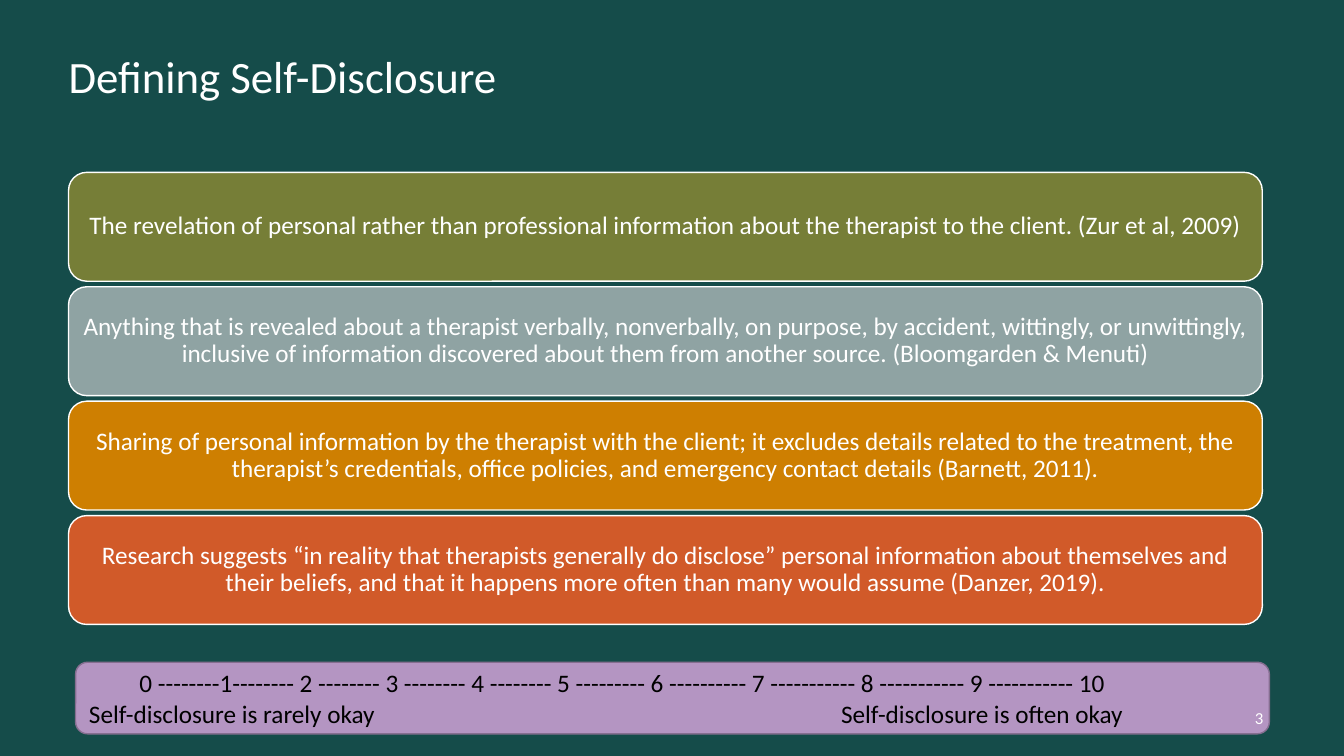
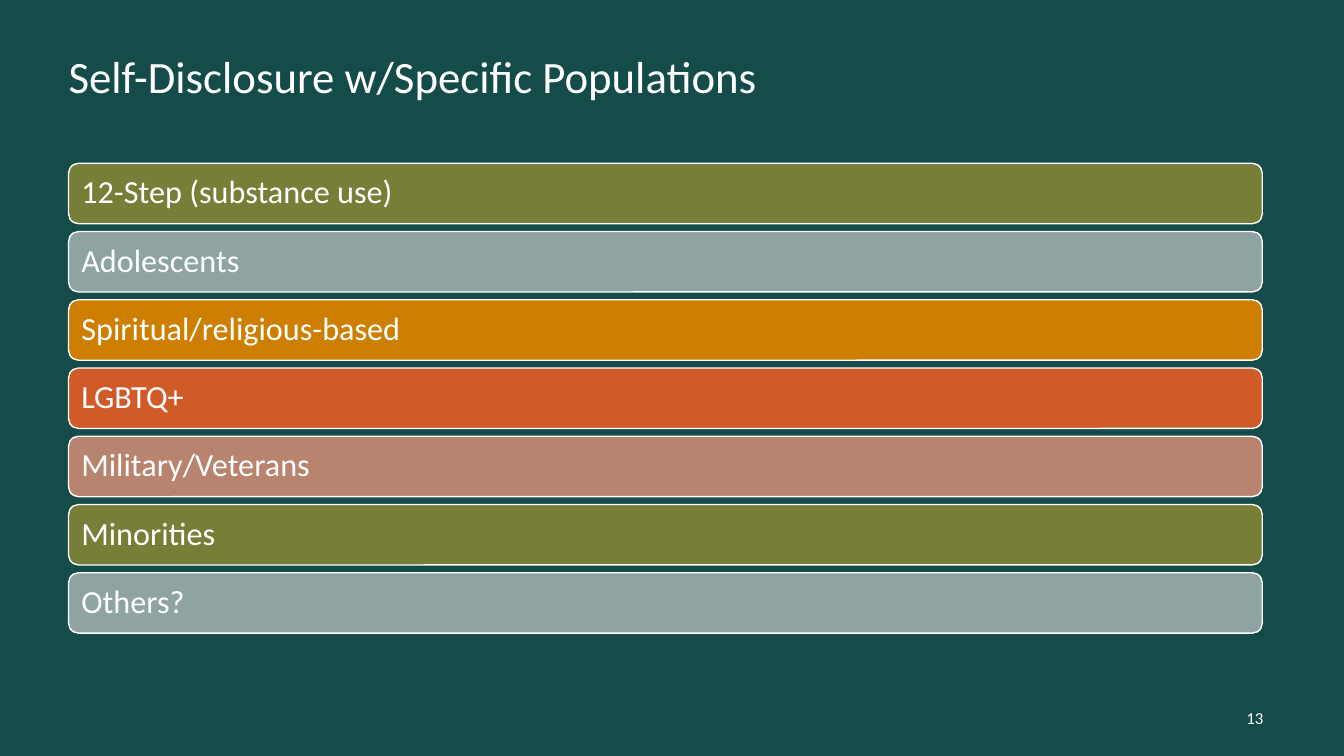
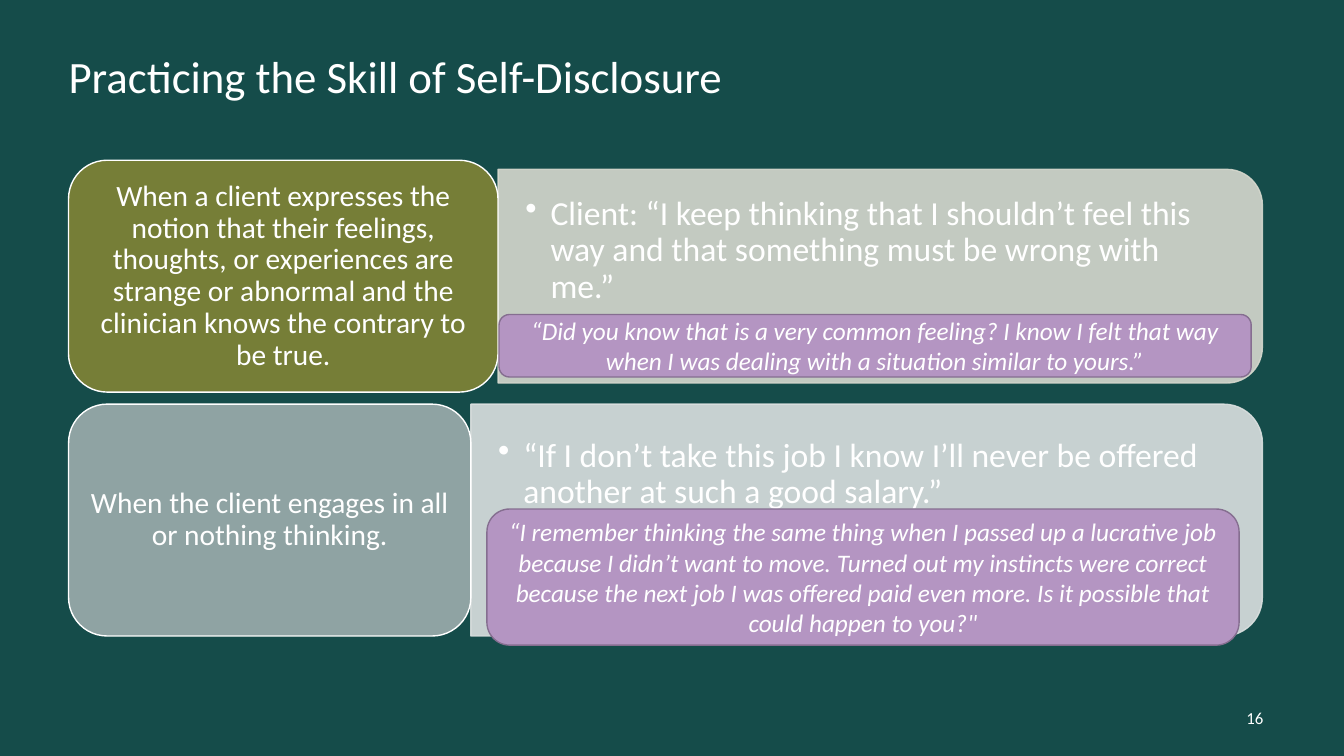
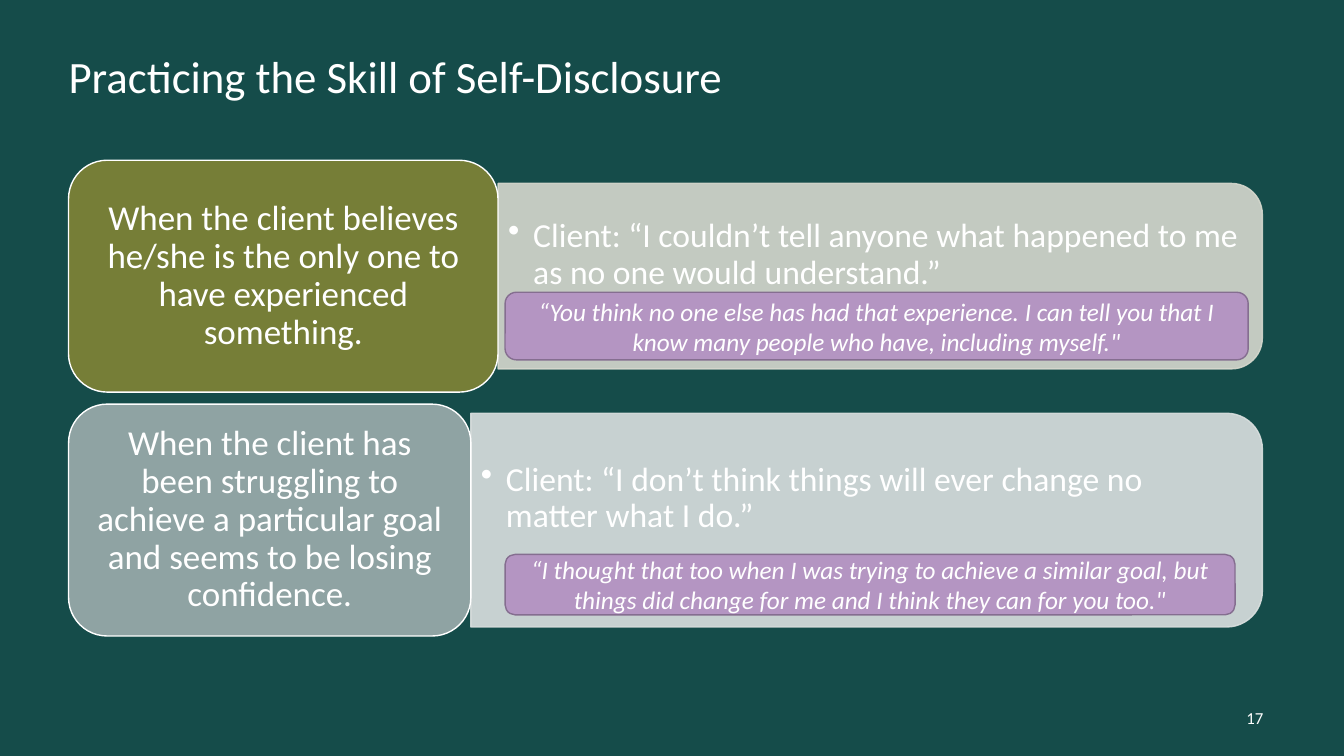
"""Build four slides about therapist self-disclosure."""
from lxml.etree import SubElement
from pptx import Presentation
from pptx.dml.color import RGBColor
from pptx.enum.shapes import MSO_SHAPE as Shape
from pptx.enum.text import MSO_ANCHOR as Anchor, MSO_AUTO_SIZE as Fit, PP_ALIGN as Align
from pptx.oxml.ns import qn
from pptx.util import Inches, Pt

FONT, WHITE, BLACK, BACK = "Calibri", "FFFFFF", "000000", "154C4A"
LILAC, PLUM = "B495C2", "856E90"
CARDS = ["767E37", "8FA3A3", "CE7F01", "D15A29", "B88470"]
TINTS = ["D6D8CE", "DBE0E0"]
LEFT, WIDTH = 0.68, 11.84
RIGHT = LEFT + WIDTH

STACKS = [
    {"title": "Defining Self-Disclosure", "page": "3",
     "top": 1.71, "step": 1.135, "high": 1.08, "size": 18, "pad": 0.07, "align": Align.CENTER,
     "items": [
         "The revelation of personal rather than professional information about the therapist to the client. (Zur et al, 2009)",
         "Anything that is revealed about a therapist verbally, nonverbally, on purpose, by accident, wittingly, or unwittingly, inclusive of information discovered about them from another source. (Bloomgarden & Menuti)",
         "Sharing of personal information by the therapist with the client; it excludes details related to the treatment, the therapist’s credentials, office policies, and emergency contact details (Barnett, 2011).",
         "Research suggests “in reality that therapists generally do disclose” personal information about themselves and their beliefs, and that it happens more often than many would assume (Danzer, 2019)."],
     "scale": [
         "0 --------1-------- 2 -------- 3 -------- 4 -------- 5 --------- 6 ---------- 7 ----------- 8 ----------- 9 ----------- 10",
         "Self-disclosure is rarely okay\tSelf-disclosure is often okay"]},
    {"title": "Self-Disclosure w/Specific Populations", "page": "13",
     "top": 1.62, "step": 0.677, "high": 0.6, "size": 23, "pad": 0.1, "align": Align.LEFT,
     "items": ["12-Step (substance use)", "Adolescents", "Spiritual/religious-based",
               "LGBTQ+", "Military/Veterans", "Minorities", "Others?"]},
]

SKILL = "Practicing the Skill of Self-Disclosure"
ROW_TOP, ROW_STEP, ROW_HIGH = 1.59, 2.42, 2.3
CARD_WIDE = [4.26, 3.99]
PAIRS = [
    {"title": SKILL, "page": "16", "size": 21, "pad": 0.27, "rows": [
        {"case": "When a client expresses the notion that their feelings, thoughts, or experiences are strange or abnormal and the clinician knows the contrary to be true.",
         "quote": "Client: “I keep thinking that I shouldn’t feel this way and that something must be wrong with me.”",
         "high": 2.12, "drop": 0.27,
         "reply": "“Did you know that is a very common feeling? I know I felt that way when I was dealing with a situation similar to yours.”",
         "box": (4.95, 3.12, 7.46, 0.62)},
        {"case": "When the client engages in all or nothing thinking.",
         "quote": "“If I don’t take this job I know I’ll never be offered another at such a good salary.”",
         "high": 2.3, "drop": 0.34,
         "reply": "“I remember thinking the same thing when I passed up a lucrative job because I didn’t want to move. Turned out my instincts were correct because the next job I was offered paid even more. Is it possible that could happen to you?\"",
         "box": (4.83, 5.05, 7.46, 1.35)}]},
    {"title": SKILL, "page": "17", "size": 25, "pad": 0.1, "rows": [
        {"case": "When the client believes he/she is the only one to have experienced something.",
         "quote": "Client: “I couldn’t tell anyone what happened to me as no one would understand.”",
         "high": 1.84, "drop": 0.35,
         "reply": "“You think no one else has had that experience. I can tell you that I know many people who have, including myself.\"",
         "box": (5.01, 2.9, 7.37, 0.67)},
        {"case": "When the client has been struggling to achieve a particular goal and seems to be losing confidence.",
         "quote": "Client: “I don’t think things will ever change no matter what I do.”",
         "high": 2.12, "drop": 0.49,
         "reply": "“I thought that too when I was trying to achieve a similar goal, but things did change for me and I think they can for you too.\"",
         "box": (5.01, 5.5, 7.24, 0.6)}]},
]


def rgb(code):
    return RGBColor.from_string(code)


def place(box):
    return [Inches(n) for n in box]


def write(shape, text, size, color=WHITE, align=Align.LEFT, anchor=Anchor.MIDDLE,
          pad=(0.1, 0.05), space=1, italic=False):
    frame = shape.text_frame
    frame.text = text
    frame.word_wrap = True
    frame.auto_size = Fit.NONE
    frame.vertical_anchor = anchor
    frame.margin_left = frame.margin_right = Inches(pad[0])
    frame.margin_top = frame.margin_bottom = Inches(pad[1])
    for para in frame.paragraphs:
        para.alignment = align
        para.line_spacing = space
        for run in para.runs:
            font = run.font
            font.name, font.size, font.italic = FONT, Pt(size), italic
            font.color.rgb = rgb(color)
    return frame.paragraphs


def draw(slide, kind, box, fill, line):
    shape = slide.shapes.add_shape(kind, *place(box))
    shape.shadow.inherit = False
    shape.fill.solid()
    shape.fill.fore_color.rgb = rgb(fill)
    shape.line.color.rgb = rgb(line)
    shape.line.width = Pt(1)
    return shape


def card(slide, box, text, fill, size, align, pad):
    shape = draw(slide, Shape.ROUNDED_RECTANGLE, box, fill, WHITE)
    write(shape, text, size, align=align, pad=pad, space=0.9)


def panel(slide, box, tint):
    x, y, wide, high = box
    turned = (x + (wide - high) / 2, y + (high - wide) / 2, high, wide)
    shape = draw(slide, Shape.ROUND_2_SAME_RECTANGLE, turned, tint, tint)
    shape.rotation = 90
    for color in shape.element.spPr.iter(qn("a:srgbClr")):
        SubElement(color, qn("a:alpha"), val="90000")


def quote(slide, box, text, pad):
    area = slide.shapes.add_textbox(*place(box))
    para = write(area, text, 24, anchor=Anchor.TOP, pad=(pad, 0), space=0.9)[0]
    props = para._p.get_or_add_pPr()
    props.set("marL", str(Inches(0.25)))
    props.set("indent", str(-Inches(0.25)))
    SubElement(props, qn("a:buChar"), char="•")


def scale(slide, lines):
    bar = draw(slide, Shape.ROUNDED_RECTANGLE, (0.75, 6.57, WIDTH, 0.71), LILAC, PLUM)
    marks, ends = write(bar, "\n".join(lines), 18, BLACK)
    marks._p.get_or_add_pPr().set("marL", str(Inches(0.5)))
    tabs = SubElement(ends._p.get_or_add_pPr(), qn("a:tabLst"))
    SubElement(tabs, qn("a:tab"), pos=str(Inches(7.46)), algn="l")


def start(deck, layout, data):
    slide = deck.slides.add_slide(layout)
    write(slide.shapes.title, data["title"], 32, anchor=Anchor.TOP, pad=(0, 0))
    return slide


def number(slide, page):
    area = slide.shapes.add_textbox(*place((11.23, 6.71, 1.3, 0.79)))
    write(area, page, 12, align=Align.RIGHT, pad=(0, 0.2), space=1.2)


def stack(slide, data):
    for i, text in enumerate(data["items"]):
        box = (LEFT, data["top"] + i * data["step"], WIDTH, data["high"])
        pad = (data["pad"], data["pad"])
        card(slide, box, text, CARDS[i % len(CARDS)], data["size"], data["align"], pad)
    if "scale" in data:
        scale(slide, data["scale"])


def pair(slide, data):
    for i, row in enumerate(data["rows"]):
        top, wide, high = ROW_TOP + i * ROW_STEP, CARD_WIDE[i], row["high"]
        x, y = LEFT + wide, top + (ROW_HIGH - high) / 2
        panel(slide, (x, y, RIGHT - x, high), TINTS[i])
        quote(slide, (x, y + row["drop"], RIGHT - 0.1 - x, high - row["drop"]),
              row["quote"], data["pad"])
        card(slide, (LEFT, top, wide, ROW_HIGH), row["case"], CARDS[i], data["size"],
             Align.CENTER, (0.09, 0.05))
        reply = draw(slide, Shape.ROUNDED_RECTANGLE, row["box"], LILAC, PLUM)
        write(reply, row["reply"], 18, align=Align.CENTER, italic=True)


def main():
    deck = Presentation()
    deck.slide_width, deck.slide_height = Inches(13.33), Inches(7.5)
    back = deck.slide_master.background.fill
    back.solid()
    back.fore_color.rgb = rgb(BACK)
    layout = deck.slide_layouts[5]
    head = layout.placeholders[0]
    head.left, head.top, head.width, head.height = place((LEFT, 0.48, WIDTH, 0.71))
    for build, group in ((stack, STACKS), (pair, PAIRS)):
        for data in group:
            slide = start(deck, layout, data)
            build(slide, data)
            number(slide, data["page"])
    deck.save("out.pptx")


if __name__ == "__main__":
    main()
